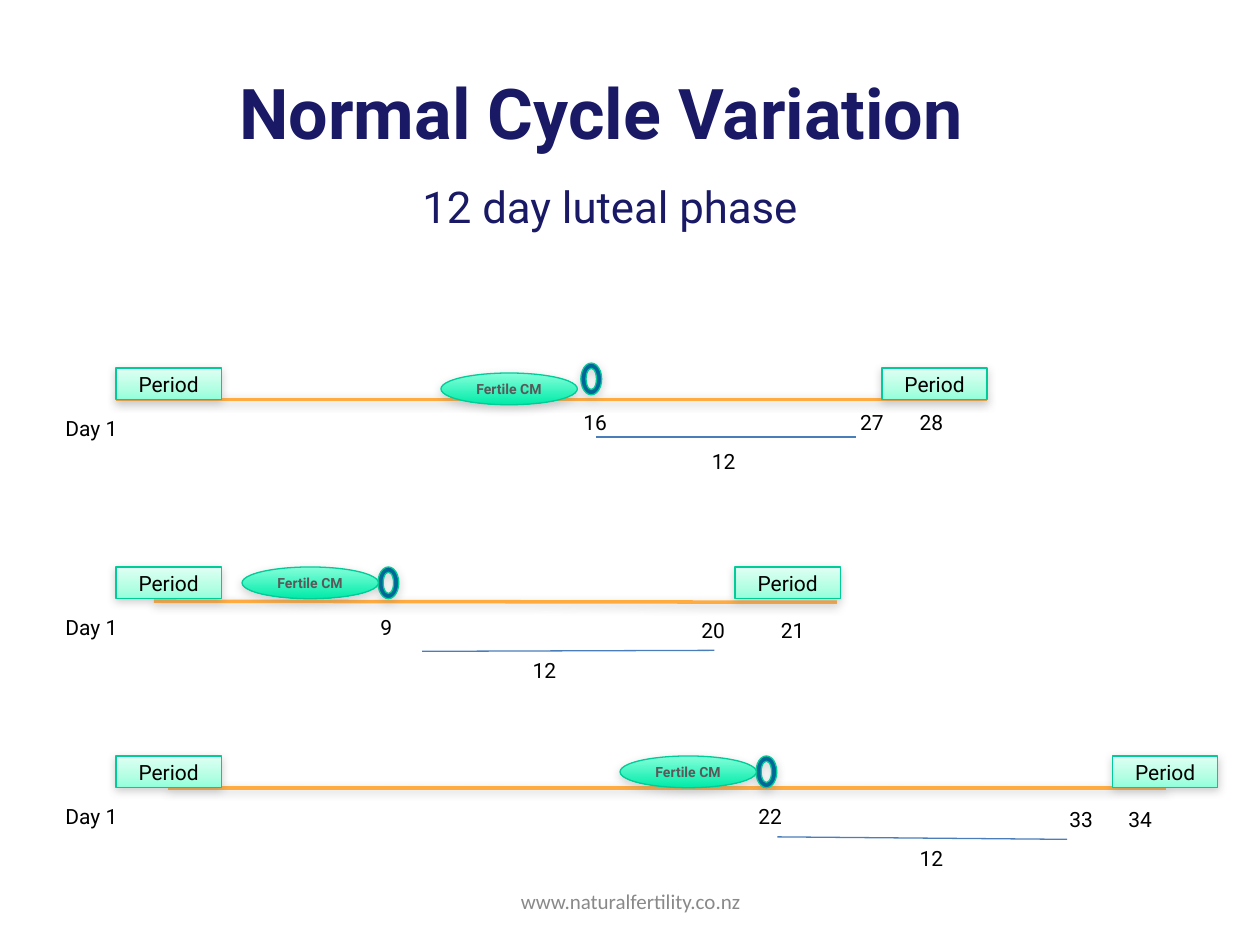
from dataclasses import dataclass

from lxml import etree
from pptx import Presentation
from pptx.dml.color import RGBColor
from pptx.enum.shapes import MSO_CONNECTOR, MSO_SHAPE
from pptx.enum.text import MSO_ANCHOR, PP_ALIGN
from pptx.oxml.ns import qn
from pptx.util import Cm, Pt

STRAIGHT = MSO_CONNECTOR.STRAIGHT
RECTANGLE, OVAL, DONUT = MSO_SHAPE.RECTANGLE, MSO_SHAPE.OVAL, MSO_SHAPE.DONUT
LEFT, CENTER = PP_ALIGN.LEFT, PP_ALIGN.CENTER
TOP, MIDDLE = MSO_ANCHOR.TOP, MSO_ANCHOR.MIDDLE


@dataclass(frozen=True)
class Theme:
    font: str = "Roboto"
    footer_font: str = "Calibri"
    navy: str = "191966"
    black: str = "000000"
    gray: str = "595959"
    footer_gray: str = "898989"
    orange: str = "FFAB40"
    blue: str = "4A7EBB"
    teal: str = "006699"
    outline: str = "00CC98"
    shadow: str = "808080"
    period_stops: tuple = ((0, "E0FFF4"), (65, "B2FFE3"), (100, "90FFDA"))
    fertile_stops: tuple = ((0, "85FFDB"), (100, "00EBA8"))
    title_size: int = 40
    subtitle_size: int = 25
    label_size: int = 12
    fertile_size: int = 8


THEME = Theme()


@dataclass(frozen=True)
class Cycle:
    top: float
    axis: tuple
    fertile: tuple
    ring: tuple
    next_period: float
    day_one_top: float
    numbers: tuple
    luteal: tuple


CYCLES = (
    Cycle(7.42, (2.34, 8.05, 19.89, 8.05), (8.89, 7.52), (11.71, 7.32), 17.78, 8.26,
          (("16", 11.51, 8.13, 1.27), ("27", 17.09, 8.13, 1),
           ("28", 18.29, 8.13, 1.27), ("12", 14.1, 8.92, 1)),
          (12.01, 8.81, 17.25, 8.81)),
    Cycle(11.43, (3.1, 12.12, 16.87, 12.14), (4.88, 11.43), (7.62, 11.43), 14.82, 12.27,
          (("9", 7.42, 12.27, 1.27), ("20", 13.89, 12.32, 1),
           ("21", 15.49, 12.32, 1.27), ("12", 10.49, 13.13, 1.19)),
          (8.51, 13.13, 14.4, 13.11)),
    Cycle(15.24, (3.38, 15.88, 23.5, 15.88), (12.5, 15.24), (15.24, 15.24), 22.43, 16.08,
          (("22", 15.04, 16.08, 1.27), ("33", 21.31, 16.13, 1.19),
           ("34", 22.5, 16.13, 1.27), ("12", 18.29, 16.92, 2.01)),
          (15.67, 16.87, 21.51, 16.92)),
)


def add_span(para, text, size, color, bold=False, font=THEME.font):
    span = para.add_run()
    span.text = text
    span.font.name = font
    span.font.size = Pt(size)
    span.font.bold = bold
    span.font.color.rgb = RGBColor.from_string(color)


def set_effects(item, opacity=0, blur=5, distance=1.6):
    effects = etree.SubElement(item._element.spPr, qn("a:effectLst"))
    if opacity:
        shadow = etree.SubElement(effects, qn("a:outerShdw"), blurRad=str(Pt(blur)),
                                  dist=str(Pt(distance)), dir="5400000", rotWithShape="0")
        color = etree.SubElement(shadow, qn("a:srgbClr"), val=THEME.shadow)
        etree.SubElement(color, qn("a:alpha"), val=str(opacity * 1000))


def set_gradient(shape, stops):
    shape.fill.gradient()
    shape.fill.gradient_angle = 270
    stop_list = shape._element.spPr.find(".//" + qn("a:gsLst"))
    stop_list.clear()
    for position, color in stops:
        stop = etree.SubElement(stop_list, qn("a:gs"), pos=str(position * 1000))
        etree.SubElement(stop, qn("a:srgbClr"), val=color)


def add_text(page, left, top, width, height, align=LEFT, anchor=TOP):
    box = page.shapes.add_textbox(Cm(left), Cm(top), Cm(width), Cm(height))
    box.text_frame.word_wrap = True
    box.text_frame.vertical_anchor = anchor
    para = box.text_frame.paragraphs[0]
    para.alignment = align
    return para


def add_label(page, text, left, top, width):
    add_span(add_text(page, left, top, width, 0.76), text, THEME.label_size, THEME.black)


def add_line(page, ends, color, width, opacity=0):
    line = page.shapes.add_connector(STRAIGHT, *(Cm(value) for value in ends))
    line.line.color.rgb = RGBColor.from_string(color)
    line.line.width = Pt(width)
    set_effects(line, opacity)


def add_marker(page, kind, left, top, width, opacity, distance):
    shape = page.shapes.add_shape(kind, Cm(left), Cm(top), Cm(width), Cm(0.64))
    shape.line.color.rgb = RGBColor.from_string(THEME.outline)
    shape.line.width = Pt(0.75)
    set_effects(shape, opacity, distance=distance)
    return shape


def set_caption(shape, text, size, color, bold=False):
    shape.text_frame.vertical_anchor = MIDDLE
    para = shape.text_frame.paragraphs[0]
    para.alignment = CENTER
    add_span(para, text, size, color, bold)


def add_period(page, left, top):
    period = add_marker(page, RECTANGLE, left, top, 2.12, 38, 1.6)
    set_gradient(period, THEME.period_stops)
    set_caption(period, "Period", THEME.label_size, THEME.black)


def add_fertile(page, left, top):
    fertile = add_marker(page, OVAL, left, top, 2.75, 35, 1.8)
    set_gradient(fertile, THEME.fertile_stops)
    set_caption(fertile, "Fertile CM", THEME.fertile_size, THEME.gray, True)


def add_ring(page, left, top):
    ring = add_marker(page, DONUT, left, top, 0.42, 35, 1.8)
    ring.adjustments[0] = 0.25
    ring.fill.solid()
    ring.fill.fore_color.rgb = RGBColor.from_string(THEME.teal)


def add_cycle(page, cycle):
    add_line(page, cycle.axis, THEME.orange, 2, 38)
    for left in (2.34, cycle.next_period):
        add_period(page, left, cycle.top)
    add_ring(page, *cycle.ring)
    add_fertile(page, *cycle.fertile)
    add_label(page, "Day 1", 1.07, cycle.day_one_top, 1.7)
    for number in cycle.numbers:
        add_label(page, *number)
    add_line(page, cycle.luteal, THEME.blue, 0.75)


def add_heading(page):
    para = add_text(page, 0.69, 1.73, 22.86, 2.74, CENTER, MIDDLE)
    add_span(para, "Normal Cycle Variation", THEME.title_size, THEME.navy, True)
    para.add_line_break()
    add_span(para, " ", THEME.title_size, THEME.navy, True)
    add_span(para, "12 day luteal phase", THEME.subtitle_size, THEME.navy)


def add_footer(page):
    para = add_text(page, 8.69, 17.65, 8.05, 1.02, CENTER, MIDDLE)
    add_span(para, "www.naturalfertility.co.nz", THEME.label_size, THEME.footer_gray,
             font=THEME.footer_font)


def main():
    deck = Presentation()
    deck.slide_width, deck.slide_height = Cm(25.4), Cm(19.05)
    page = deck.slides.add_slide(deck.slide_layouts[6])
    add_heading(page)
    for cycle in CYCLES:
        add_cycle(page, cycle)
    add_footer(page)
    deck.save("out.pptx")


if __name__ == "__main__":
    main()
